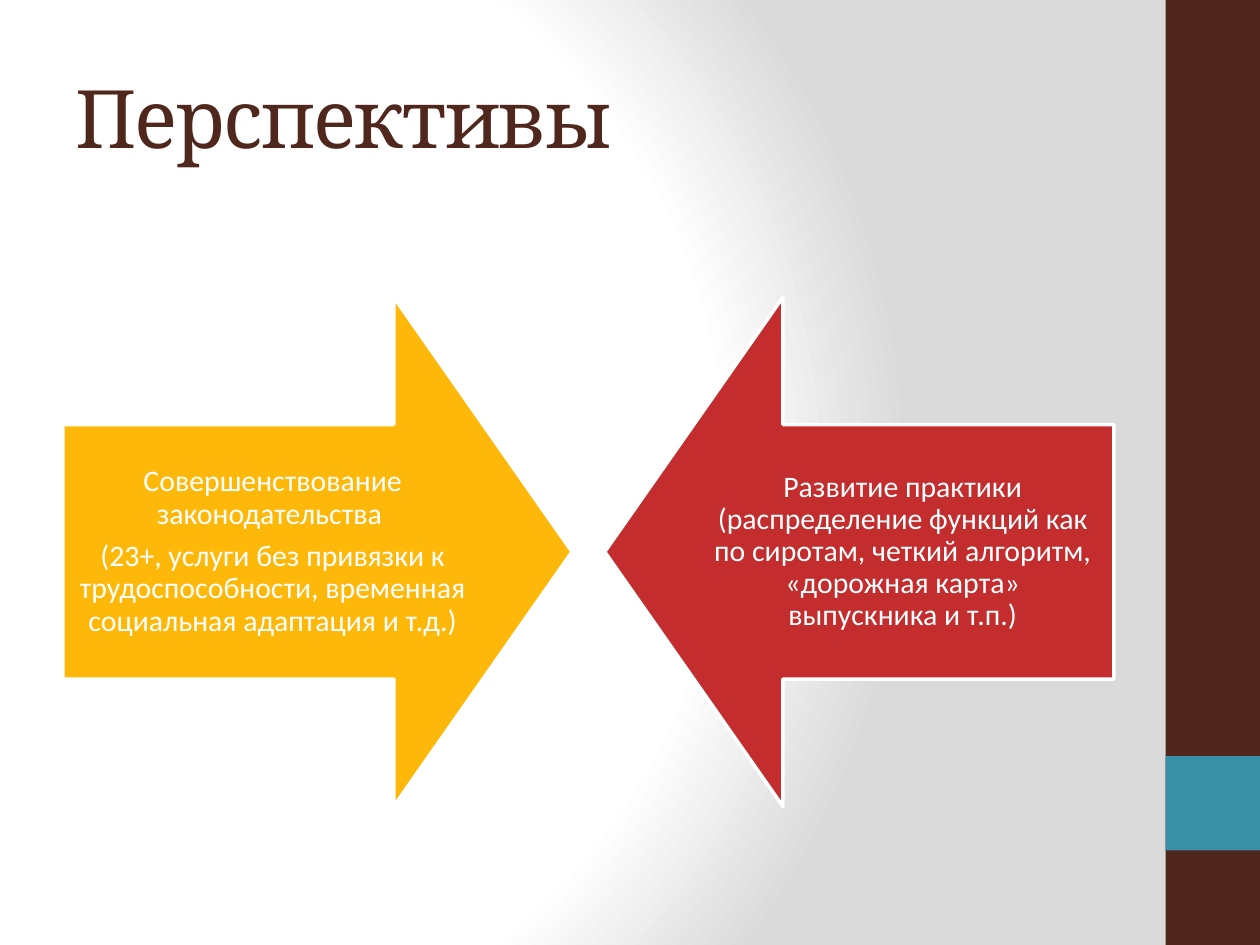
"""Build the "Перспективы" slide with two arrows pointing at each other."""
from lxml.etree import fromstring
from pptx import Presentation
from pptx.dml.color import RGBColor
from pptx.enum.shapes import MSO_SHAPE
from pptx.enum.text import MSO_ANCHOR, PP_ALIGN
from pptx.util import Inches, Pt

COLORS = {
    "paper": "FFFFFF",
    "shade": "DADADA",
    "brown": "4F271C",
    "teal": "3891A7",
    "amber": "FEB80A",
    "red": "C32D2E",
}
BACKGROUND = """
<p:bg xmlns:p="http://schemas.openxmlformats.org/presentationml/2006/main"
      xmlns:a="http://schemas.openxmlformats.org/drawingml/2006/main">
  <p:bgPr>
    <a:gradFill rotWithShape="1">
      <a:gsLst>
        <a:gs pos="0"><a:srgbClr val="{paper}"/></a:gs>
        <a:gs pos="75000"><a:srgbClr val="{paper}"/></a:gs>
        <a:gs pos="100000"><a:srgbClr val="{shade}"/></a:gs>
      </a:gsLst>
      <a:path path="circle">
        <a:fillToRect l="20000" t="50000" r="100000" b="50000"/>
      </a:path>
    </a:gradFill>
    <a:effectLst/>
  </p:bgPr>
</p:bg>
"""


def add_filled(preset, left, top, width, height, color):
    shape = slide.shapes.add_shape(
        preset, Inches(left), Inches(top), Inches(width), Inches(height))
    shape.shadow.inherit = False
    shape.fill.solid()
    shape.fill.fore_color.rgb = RGBColor.from_string(COLORS[color])
    shape.line.fill.background()
    return shape


def add_text(left, top, width, height, paragraphs, font, size, color):
    box = slide.shapes.add_textbox(
        Inches(left), Inches(top), Inches(width), Inches(height))
    frame = box.text_frame
    frame.word_wrap = True
    frame.vertical_anchor = MSO_ANCHOR.MIDDLE
    for index, text in enumerate(paragraphs):
        paragraph = frame.add_paragraph() if index else frame.paragraphs[0]
        run = paragraph.add_run()
        run.text = text
        run.font.name = font
        run.font.size = Pt(size)
        run.font.color.rgb = RGBColor.from_string(COLORS[color])
    return frame


prs = Presentation()
prs.slide_width, prs.slide_height = Inches(10), Inches(7.5)
slide = prs.slides.add_slide(prs.slide_layouts[6])
slide.element.cSld.insert(0, fromstring(BACKGROUND.format(**COLORS)))

add_filled(MSO_SHAPE.RECTANGLE, 9.25, 0, 0.75, 7.5, "brown")
add_filled(MSO_SHAPE.RECTANGLE, 9.25, 6, 0.75, 0.75, "teal")

title = add_text(0.5, 0.3, 8.33, 1.25, ["Перспективы"], "Cambria", 46, "brown")
title.paragraphs[0].runs[0].font._element.set("spc", "-100")

directions = [
    (MSO_SHAPE.RIGHT_ARROW, 0.5, 0.5, "amber", [
        "Совершенствование законодательства ",
        "(23+, услуги без привязки к трудоспособности, "
        "временная социальная адаптация и т.д.)",
    ]),
    (MSO_SHAPE.LEFT_ARROW, 4.8, 5.5, "red", [
        "Развитие практики (распределение функций как по сиротам, "
        "четкий алгоритм, «дорожная карта» выпускника и т.п.)",
    ]),
]
for preset, arrow_left, text_left, color, paragraphs in directions:
    arrow = add_filled(preset, arrow_left, 2.36, 4.04, 4.04, color)
    arrow.adjustments[0] = 0.5
    arrow.adjustments[1] = 0.35
    arrow.line.color.rgb = RGBColor.from_string(COLORS["paper"])
    arrow.line.width = Pt(2)

    label = add_text(text_left, 3.37, 3.33, 2.02, paragraphs, "Calibri", 17, "paper")
    label.margin_left = label.margin_right = Inches(0.13)
    label.margin_top = label.margin_bottom = Inches(0.13)
    for paragraph in label.paragraphs:
        paragraph.alignment = PP_ALIGN.CENTER
        paragraph.line_spacing = 0.9
        paragraph.space_after = Pt(6)

prs.save("out.pptx")
